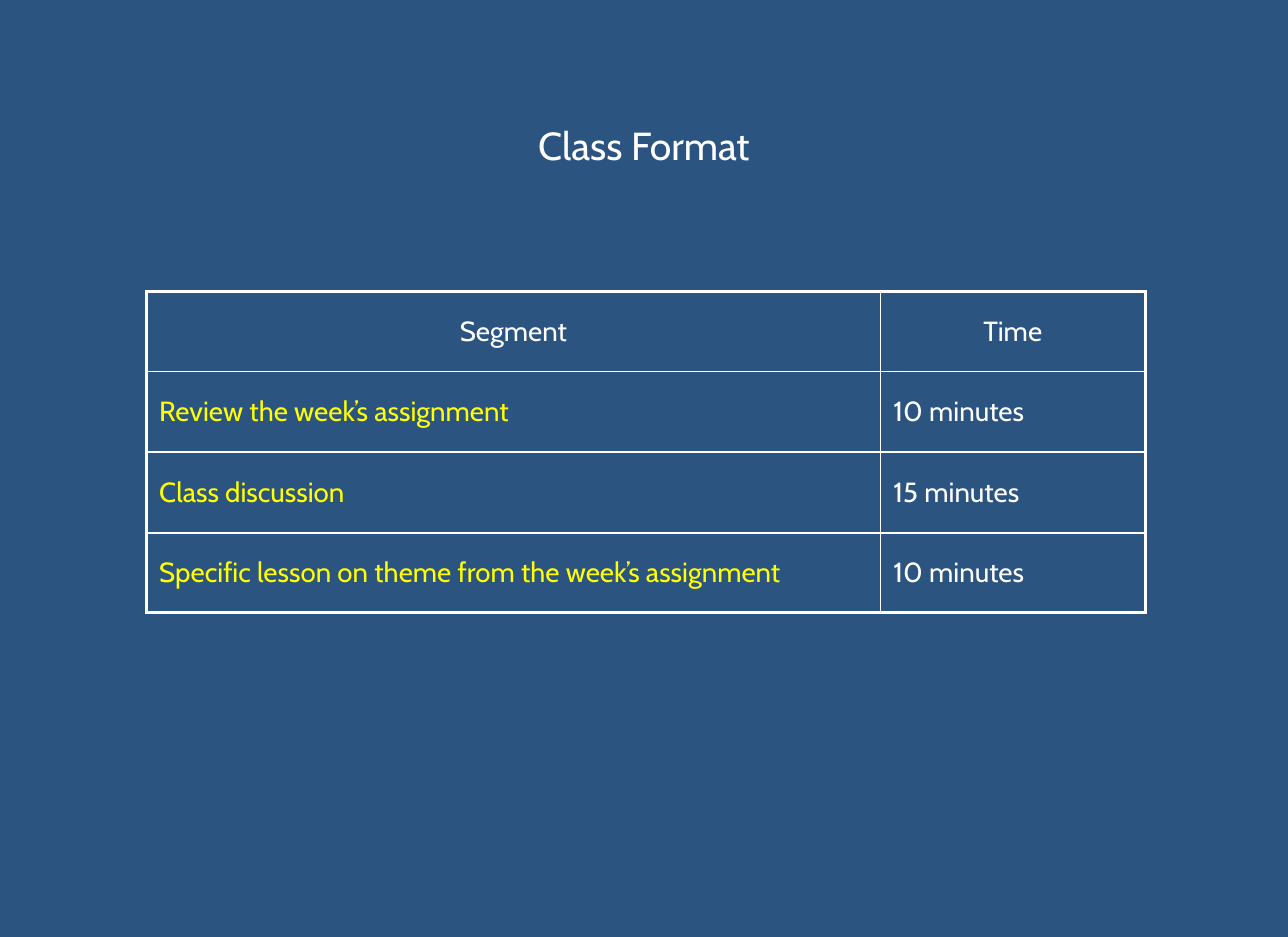
"""Build a class format slide with a timetable."""
from lxml import etree
from pptx import Presentation
from pptx.dml.color import RGBColor
from pptx.enum.text import MSO_ANCHOR, PP_ALIGN
from pptx.oxml.ns import qn
from pptx.util import Inches, Pt

LEFT, CENTER = PP_ALIGN.LEFT, PP_ALIGN.CENTER
MIDDLE = MSO_ANCHOR.MIDDLE
BLUE, WHITE, YELLOW = "2B5481", "FFFFFF", "FFFF00"
FONT = "Cabin"
THIN, THICK = 1, 2.25

TITLE = "Class Format"
ROWS = [
    ("Segment", "Time"),
    ("Review the week’s assignment", "10 minutes"),
    ("Class discussion", "15 minutes"),
    ("Specific lesson on theme from the week’s assignment", "10 minutes"),
]
COLUMN_WIDTHS = (6.27, 2.26)
ROW_HEIGHTS = (0.68, 0.69, 0.69, 0.68)


def rgb(value):
    return RGBColor.from_string(value)


def write_text(frame, text, size=17, color=WHITE, align=LEFT):
    frame.word_wrap = True
    paragraph = frame.paragraphs[0]
    paragraph.alignment = align
    run = paragraph.add_run()
    run.text = text
    run.font.name = FONT
    run.font.size = Pt(size)
    run.font.bold = False
    run.font.color.rgb = rgb(color)


def set_margins(target):
    target.margin_left = target.margin_right = Inches(0.11)
    target.margin_top = target.margin_bottom = Inches(0.05)
    target.vertical_anchor = MIDDLE


def add_border(cell, side, width):
    properties = cell._tc.get_or_add_tcPr()
    line = etree.SubElement(properties, qn(f"a:ln{side}"), w=str(Pt(width)))
    fill = etree.SubElement(line, qn("a:solidFill"))
    etree.SubElement(fill, qn("a:srgbClr"), val=WHITE)


def add_title(slide):
    title = slide.shapes.add_textbox(Inches(0.55), Inches(0.44), Inches(9.9), Inches(1.6))
    set_margins(title.text_frame)
    write_text(title.text_frame, TITLE, size=24, align=CENTER)


def add_timetable(slide):
    last_row, last_column = len(ROWS) - 1, len(COLUMN_WIDTHS) - 1
    table = slide.shapes.add_table(
        len(ROWS), len(COLUMN_WIDTHS), Inches(1.25), Inches(2.49),
        Inches(sum(COLUMN_WIDTHS)), Inches(sum(ROW_HEIGHTS))).table
    table.first_row = table.horz_banding = False
    for column, width in zip(table.columns, COLUMN_WIDTHS):
        column.width = Inches(width)
    for row, height in zip(table.rows, ROW_HEIGHTS):
        row.height = Inches(height)

    for row_index, texts in enumerate(ROWS):
        for column_index, text in enumerate(texts):
            cell = table.cell(row_index, column_index)
            is_header = row_index == 0
            is_segment = column_index == 0 and not is_header
            set_margins(cell)
            write_text(cell.text_frame, text,
                       color=YELLOW if is_segment else WHITE,
                       align=CENTER if is_header else LEFT)
            outer_sides = {
                "L": column_index == 0,
                "R": column_index == last_column,
                "T": is_header,
                "B": row_index == last_row,
            }
            for side, is_outer in outer_sides.items():
                add_border(cell, side, THICK if is_outer else THIN)
            cell.fill.background()


def main():
    presentation = Presentation()
    presentation.slide_width = Inches(11)
    presentation.slide_height = Inches(8)
    slide = presentation.slides.add_slide(presentation.slide_layouts[6])
    slide.background.fill.solid()
    slide.background.fill.fore_color.rgb = rgb(BLUE)
    add_title(slide)
    add_timetable(slide)
    presentation.save("out.pptx")


if __name__ == "__main__":
    main()
